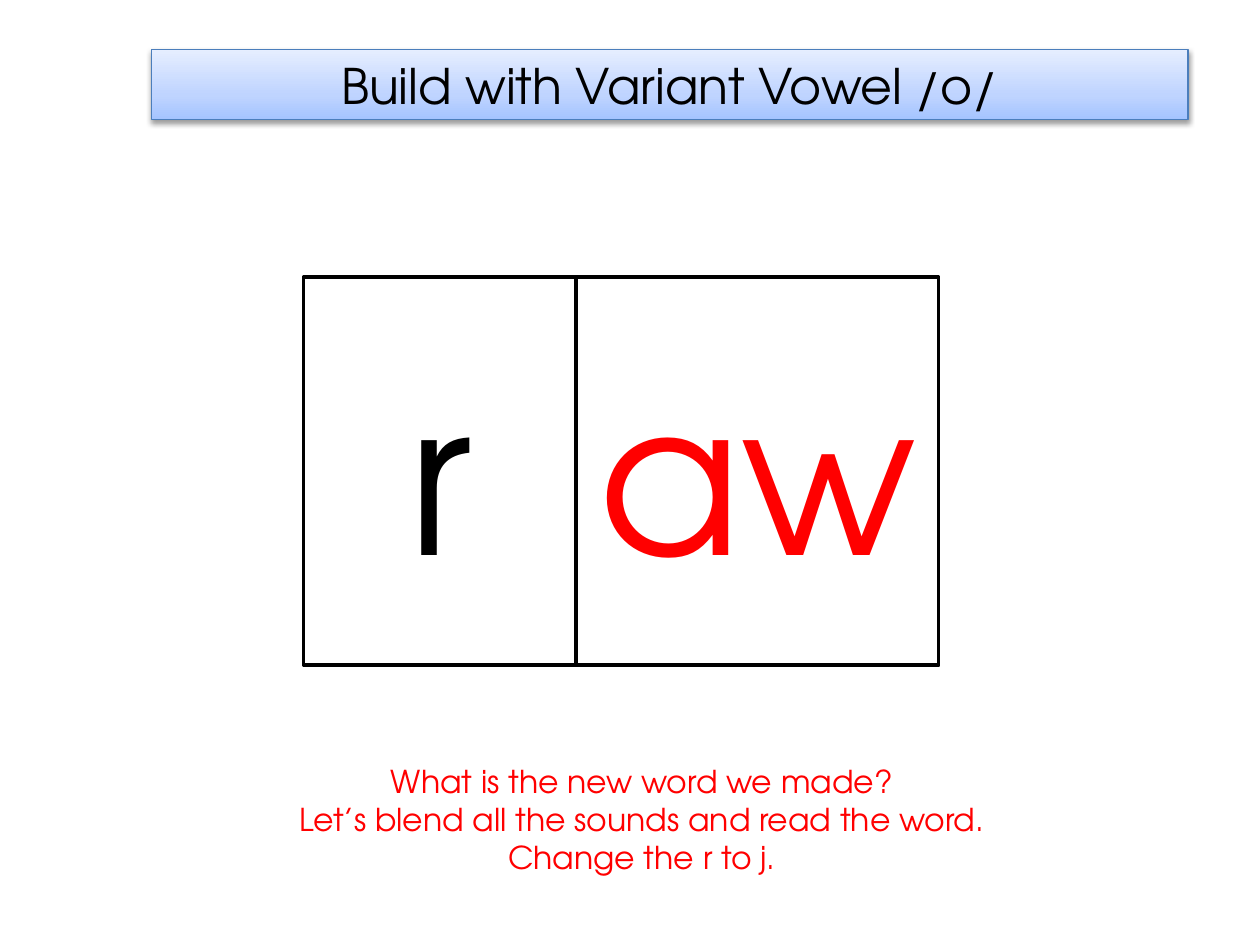
from copy import deepcopy
from dataclasses import dataclass

from lxml.etree import SubElement as Sub
from pptx import Presentation
from pptx.dml.color import RGBColor as Rgb
from pptx.enum.shapes import MSO_SHAPE as Kind
from pptx.enum.text import MSO_ANCHOR as Anchor, MSO_AUTO_SIZE as Fit, PP_ALIGN as Align
from pptx.oxml.ns import qn
from pptx.util import Inches, Pt


@dataclass(frozen=True)
class Theme:
    font: str = "TeX Gyre Adventor"
    black: str = "000000"
    white: str = "FFFFFF"
    red: str = "FF0000"
    edge: str = "4B7EBC"
    blend: tuple = ((0, "A4C4FF"), (0.35, "BFD4FF"), (1, "E6EEFF"))
    head: int = 28
    sound: int = 120
    note: int = 18


def hue(code):
    return Rgb.from_string(code)


def write(frame, text, *, font, size, color, anchor=Anchor.MIDDLE, fit=Fit.NONE):
    """Fill a text frame with centred text, one paragraph a line."""
    frame.word_wrap = True
    frame.auto_size = fit
    frame.vertical_anchor = anchor
    frame.text = text
    for para in frame.paragraphs:
        para.alignment = Align.CENTER
        style = para.runs[0].font
        style.name, style.size = font, Pt(size)
        style.color.rgb = hue(color)


class Deck:
    def __init__(self, theme):
        self.theme = theme
        self.show = Presentation()
        self.show.slide_width, self.show.slide_height = Inches(10), Inches(7.5)
        self.slide = self.show.slides.add_slide(self.show.slide_layouts[5])

    def line(self, shape, color, width):
        shape.line.color.rgb = hue(color)
        shape.line.width = Pt(width)

    def blend(self, shape):
        """Give the shape an upright blend of three colours."""
        fill = shape.fill
        fill.gradient()
        fill.gradient_angle = 90
        stops = shape._element.spPr.find(".//" + qn("a:gsLst"))
        stops.insert(1, deepcopy(stops[0]))
        for item, stop, (place, color) in zip(stops, fill.gradient_stops, self.theme.blend):
            item.set("pos", str(round(place * 100000)))
            stop.color.rgb = hue(color)

    def shade(self, shape):
        """Cast a soft shadow straight down."""
        shape.shadow.inherit = False
        group = shape._element.spPr.find(qn("a:effectLst"))
        cast = Sub(group, qn("a:outerShdw"), blurRad=str(Pt(3.15)),
                   dist=str(Pt(1.57)), dir="5400000", rotWithShape="0")
        color = Sub(cast, qn("a:srgbClr"), val=self.theme.black)
        Sub(color, qn("a:alpha"), val="38000")

    def title(self, text, x, y, w, h):
        look, shape = self.theme, self.slide.shapes.title
        shape.left, shape.top = Inches(x), Inches(y)
        shape.width, shape.height = Inches(w), Inches(h)
        self.blend(shape)
        self.line(shape, look.edge, 0.75)
        self.shade(shape)
        write(shape.text_frame, text, font=look.font, size=look.head, color=look.black)

    def card(self, text, x, y, w, h, color):
        look = self.theme
        shape = self.slide.shapes.add_shape(
            Kind.RECTANGLE, Inches(x), Inches(y), Inches(w), Inches(h))
        shape.shadow.inherit = False
        shape.fill.solid()
        shape.fill.fore_color.rgb = hue(look.white)
        self.line(shape, look.black, 2)
        write(shape.text_frame, text, font=look.font, size=look.sound, color=color)

    def note(self, text, x, y, w, h):
        look = self.theme
        box = self.slide.shapes.add_textbox(Inches(x), Inches(y), Inches(w), Inches(h))
        write(box.text_frame, text, font=look.font, size=look.note, color=look.red,
              anchor=Anchor.TOP, fit=Fit.SHAPE_TO_FIT_TEXT)


def main():
    look = Theme()
    deck = Deck(look)

    # Heading bar
    deck.title("Build with Variant Vowel /o/", 1.2, 0.39, 8.23, 0.56)

    # Sound cards, side by side
    left = 2.41
    for text, width, color in (("r", 2.16, look.black), ("aw", 2.88, look.red)):
        deck.card(text, left, 2.2, width, 3.08, color)
        left += width

    # Prompts for the class
    deck.note("What is the new word we made?\n"
              "Let’s blend all the sounds and read the word.\n"
              "Change the r to j.", 1.61, 6, 6.97, 1.01)

    deck.show.save("out.pptx")


if __name__ == "__main__":
    main()
